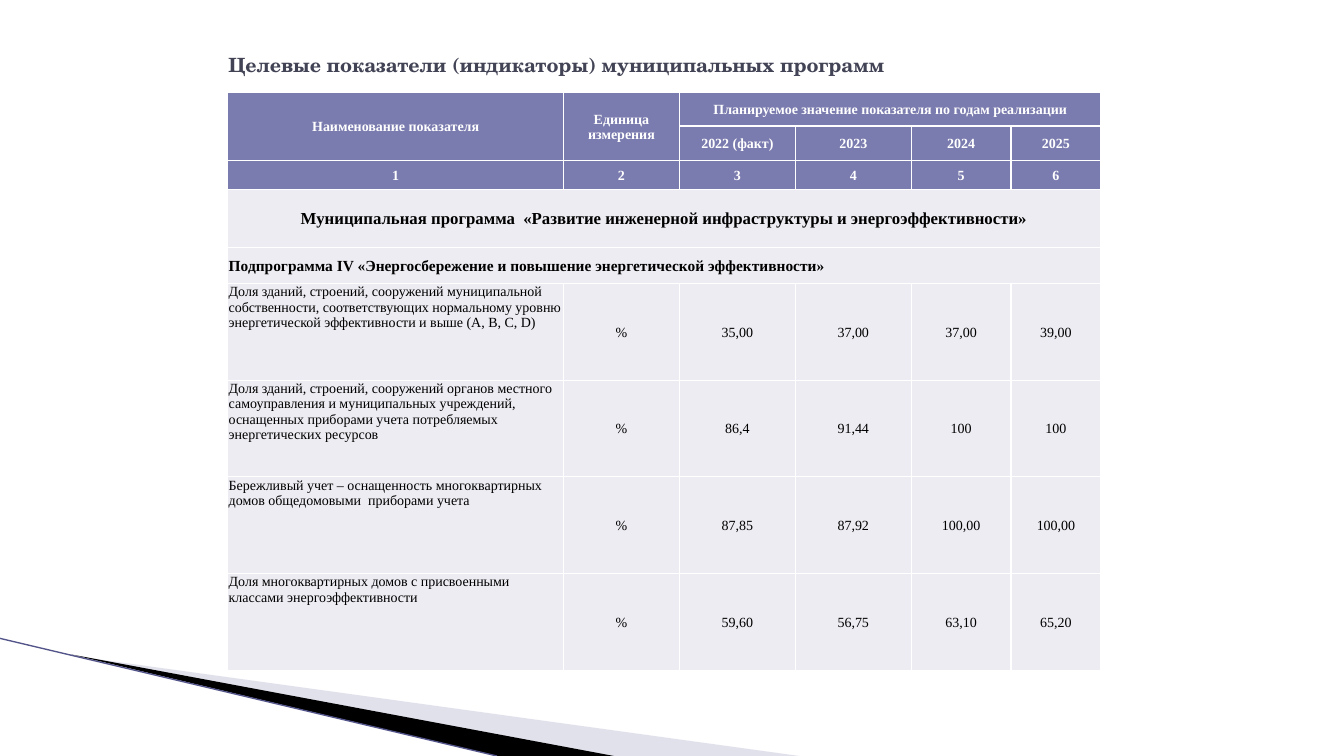
from lxml import etree
from pptx import Presentation
from pptx.dml.color import RGBColor
from pptx.enum.shapes import MSO_CONNECTOR as Connector
from pptx.enum.text import MSO_ANCHOR as Anchor, PP_ALIGN as Align
from pptx.oxml.ns import qn
from pptx.util import Pt

HEADER_FILL, BODY_FILL = "7A7BAE", "ECECF2"
WHITE, BLACK = "FFFFFF", "000000"
COLUMN_WIDTHS = [239.8, 82.8, 82.8, 82.8, 71.3, 64.1]
ROW_HEIGHTS = [23.8, 23, 20.9, 41, 25.9] + [69.1] * 4
HEADER_ROWS, PROGRAM_ROW, SUBPROGRAM_ROW = 3, 3, 4
MERGES = [(0, 0, 1, 0), (0, 1, 1, 1), (0, 2, 0, 5), (3, 0, 3, 5), (4, 0, 4, 5)]
ROWS = [
    ["Наименование показателя", "Единица измерения",
     "Планируемое значение показателя по годам реализации"],
    ["", "", "2022 (факт)", "2023", "2024", "2025"],
    ["1", "2", "3", "4", "5", "6"],
    ["Муниципальная программа  «Развитие инженерной инфраструктуры и энергоэффективности»"],
    ["Подпрограмма IV «Энергосбережение и повышение энергетической эффективности»"],
    ["Доля зданий, строений, сооружений муниципальной собственности, соответствующих "
     "нормальному уровню энергетической эффективности и выше (А, В, С, D)",
     "%", "35,00", "37,00", "37,00", "39,00"],
    ["Доля зданий, строений, сооружений органов местного самоуправления и муниципальных "
     "учреждений, оснащенных приборами учета потребляемых энергетических ресурсов",
     "%", "86,4", "91,44", "100", "100"],
    ["Бережливый учет – оснащенность многоквартирных домов общедомовыми  приборами учета",
     "%", "87,85", "87,92", "100,00", "100,00"],
    ["Доля многоквартирных домов с присвоенными классами энергоэффективности",
     "%", "59,60", "56,75", "63,10", "65,20"],
]


def color(value):
    return RGBColor.from_string(value)


def set_font(paragraph, name, size, font_color, bold):
    font = paragraph.font
    font.name, font.size, font.bold = name, Pt(size), bold
    font.color.rgb = color(font_color)


def add_wedge(slide, left, top, points, fill, opacity=100):
    (start_x, start_y), *others = [(Pt(left + x), Pt(top + y)) for x, y in points]
    builder = slide.shapes.build_freeform(start_x, start_y)
    builder.add_line_segments(others, close=True)
    shape = builder.convert_to_shape()
    shape.shadow.inherit = False
    shape.line.fill.background()
    shape.fill.solid()
    shape.fill.fore_color.rgb = color(fill)
    if opacity < 100:
        fill_color = shape._element.spPr.find(qn("a:solidFill"))[0]
        etree.SubElement(fill_color, qn("a:alpha"), val=str(opacity * 1000))


def add_corner(slide, left, top, width, height):
    # Pale and black wedges running down to the bottom edge
    add_wedge(slide, left, top, [(52.5, 12.5), (width, height), (438, height)],
              "B6B6D1", 40)
    add_wedge(slide, left, top, [(51, 11.5), (438.5, height), (355, height)], BLACK)
    # Thin line along the lower side
    line = slide.shapes.add_connector(Connector.STRAIGHT, Pt(left), Pt(top),
                                      Pt(left + 355), Pt(top + height))
    line.line.color.rgb = color("53548A")
    line.line.width = Pt(0.95)
    etree.SubElement(line._element.spPr, qn("a:effectLst"))


def add_title(slide, left, top, width, height):
    box = slide.shapes.add_textbox(Pt(left), Pt(top), Pt(width), Pt(height))
    frame = box.text_frame
    frame.word_wrap = True
    frame.vertical_anchor = Anchor.MIDDLE
    paragraph = frame.paragraphs[0]
    paragraph.text = "Целевые показатели (индикаторы) муниципальных программ"
    set_font(paragraph, "TeX Gyre Schola", 14, "424456", True)


def add_borders(cell):
    properties = cell._tc.get_or_add_tcPr()
    for position, side in enumerate(["a:lnL", "a:lnR", "a:lnT", "a:lnB"]):
        border = etree.Element(qn(side), w=str(Pt(1)))
        fill = etree.SubElement(border, qn("a:solidFill"))
        etree.SubElement(fill, qn("a:srgbClr"), val=WHITE)
        properties.insert(position, border)


def style_cell(cell, row, column):
    is_header = row < HEADER_ROWS
    is_indicator = row > SUBPROGRAM_ROW and column == 0
    cell.fill.solid()
    cell.fill.fore_color.rgb = color(HEADER_FILL if is_header else BODY_FILL)
    add_borders(cell)
    cell.margin_left = cell.margin_right = cell.margin_top = Pt(0.7)
    cell.margin_bottom = 0
    cell.vertical_anchor = Anchor.TOP if is_indicator else Anchor.MIDDLE
    paragraph = cell.text_frame.paragraphs[0]
    is_left = is_indicator or row == SUBPROGRAM_ROW
    paragraph.alignment = Align.LEFT if is_left else Align.CENTER
    size = {PROGRAM_ROW: 12, SUBPROGRAM_ROW: 11}.get(row, 10)
    set_font(paragraph, "Times New Roman", size, WHITE if is_header else BLACK,
             row <= SUBPROGRAM_ROW)


def add_indicators(slide, left, top):
    frame = slide.shapes.add_table(
        len(ROWS), len(COLUMN_WIDTHS), Pt(left), Pt(top),
        Pt(sum(COLUMN_WIDTHS)), Pt(sum(ROW_HEIGHTS)))
    table = frame.table
    table.horz_banding = False
    for column, width in zip(table.columns, COLUMN_WIDTHS):
        column.width = Pt(width)
    for row, height in zip(table.rows, ROW_HEIGHTS):
        row.height = Pt(height)
    # Wording, then look of every cell
    for row, texts in enumerate(ROWS):
        for column, text in enumerate(texts):
            table.cell(row, column).text = text
        for column in range(len(COLUMN_WIDTHS)):
            style_cell(table.cell(row, column), row, column)
    for first_row, first_column, last_row, last_column in MERGES:
        table.cell(first_row, first_column).merge(table.cell(last_row, last_column))


def main():
    presentation = Presentation()
    presentation.slide_width, presentation.slide_height = Pt(960), Pt(540)
    slide = presentation.slides.add_slide(presentation.slide_layouts[6])
    add_corner(slide, 0, 456, 571, 84)
    add_title(slide, 156, 21.6, 648, 49.7)
    add_indicators(slide, 162.7, 66.2)
    presentation.save("out.pptx")


if __name__ == "__main__":
    main()
